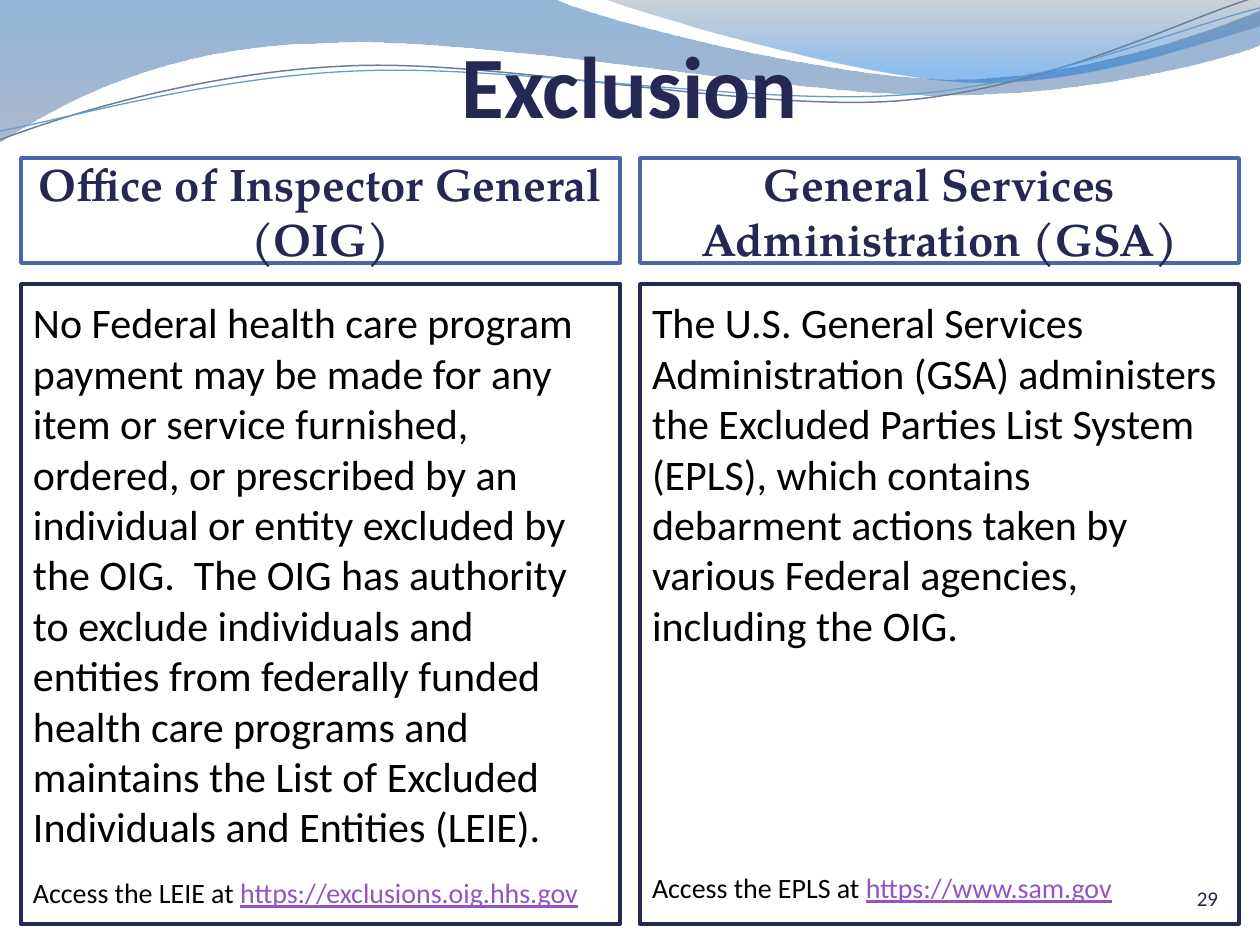
"""Builds the Exclusion slide comparing the OIG and GSA lists."""
import dataclasses
import math

import lxml.etree
import pptx
import pptx.dml.color
import pptx.enum.shapes
import pptx.enum.text
import pptx.oxml.ns
import pptx.util

PX = 914400 / 126
ALIGN = pptx.enum.text.PP_ALIGN
ANCHOR = pptx.enum.text.MSO_ANCHOR
qn = pptx.oxml.ns.qn


@dataclasses.dataclass(frozen=True)
class Theme:
    """Colours, fonts and type sizes of the slide."""
    navy: str = "242852"
    blue: str = "4A66AC"
    white: str = "FFFFFF"
    black: str = "000000"
    link: str = "9454C3"
    number: str = "22264E"
    body_font: str = "Calibri"
    head_font: str = "TeX Gyre Pagella"
    title_size: int = 50
    head_size: int = 26
    body_size: int = 24
    link_size: int = 16
    number_size: int = 12
    border: int = 2
    bands: tuple = (((0, "125EAA", 45), (100, "697FA4", 55)),
                    ((0, "596982", 30), (80, "0670DA", 45)))
    strands: tuple = (("707E95", 0.85), ("629DD1", 0.75))


T = Theme()
TILT = 2.7

BANDS = (
    [(0, 0), (554, -1),
     ((600, 21), (837, 79), (955, 79)), ((1075, 79), (1207, 33), (1260, 11)),
     (1261, 45),
     ((1239, 55), (1096, 96), (940, 95)), ((784, 95), (481, 35), (324, 43)),
     ((163, 45), (58, 105), (-1, 142))],
    [(604, -1),
     ((641, 14), (859, 78), (969, 82)), ((1079, 87), (1211, 40), (1260, 26)),
     (1260, 0)],
)
STRANDS = (
    [(0, 140), ((60, 117), (199, 72), (349, 66)),
     ((498, 59), (747, 112), (898, 101)), ((1050, 89), (1182, 19), (1257, -3))],
    [(0, 131), ((59, 121), (207, 77), (357, 71)),
     ((508, 64), (752, 106), (903, 95)), ((1053, 84), (1185, 26), (1260, 8))],
)
COLUMNS = (
    ("Office of Inspector General (OIG)",
     "No Federal health care program payment may be made for any item or "
     "service furnished, ordered, or prescribed by an individual or entity "
     "excluded by the OIG.  The OIG has authority to exclude individuals and "
     "entities from federally funded health care programs and maintains the "
     "List of Excluded Individuals and Entities (LEIE).",
     "Access the LEIE at ", "https://exclusions.oig.hhs.gov", 14),
    ("General Services Administration (GSA)",
     "The U.S. General Services Administration (GSA) administers the Excluded "
     "Parties List System (EPLS), which contains debarment actions taken by "
     "various Federal agencies, including the OIG.",
     "Access the EPLS at ", "https://www.sam.gov", 126),
)


def emu(px):
    """Turn px into EMU."""
    return pptx.util.Emu(round(px * PX))


def rgb(code):
    """Turn a hex code into a colour."""
    return pptx.dml.color.RGBColor.from_string(code)


def apply(obj, fmt):
    """Set each attribute named in a dict of format values."""
    for name, value in fmt.items():
        setattr(obj, name, value)


def turn(pt, centre, degrees):
    """Rotate a point clockwise about a centre."""
    dx, dy = pt[0] - centre[0], pt[1] - centre[1]
    c, s = math.cos(math.radians(degrees)), math.sin(math.radians(degrees))
    return centre[0] + dx * c - dy * s, centre[1] + dx * s + dy * c


def add_curve(slide, box, nodes, closed, tilt=0):
    """Draw an outline of points and cubic curve segments relative to a box."""
    x, y, w, h = box
    curved = [isinstance(node[0], tuple) for node in nodes]
    flat = [pt for node, bent in zip(nodes, curved) for pt in (node if bent else (node,))]
    turned = [turn(pt, (w / 2, h / 2), tilt) for pt in flat]
    pts = [(emu(x + px), emu(y + py)) for px, py in turned]
    fb = slide.shapes.build_freeform(*pts[0])
    fb.add_line_segments(pts[1:], close=closed)
    sp = fb.convert_to_shape()
    sp.shadow.inherit = False
    sp.rotation = -tilt
    lines = iter(list(sp.element.iter(qn("a:lnTo"))))
    for bent in curved[1:]:
        line = next(lines)
        if bent:
            curve = lxml.etree.Element(qn("a:cubicBezTo"))
            line.addprevious(curve)
            for part in (line, next(lines), next(lines)):
                curve.append(part[0])
                part.getparent().remove(part)
    return sp


def add_waves(slide, box):
    """Draw the translucent bands and thin strands of the header."""
    for nodes, stops in zip(BANDS, T.bands):
        sp = add_curve(slide, box, nodes, True)
        sp.line.fill.background()
        sp.fill.gradient()
        sp.fill.gradient_angle = 270
        for stop, (position, code, _) in zip(sp.fill.gradient_stops, stops):
            stop.position = position / 100
            stop.color.rgb = rgb(code)
        colours = sp.element.iter(qn("a:srgbClr"))
        for clr, (_, _, opacity) in zip(colours, stops):
            lxml.etree.SubElement(clr, qn("a:alpha"), val=str(opacity * 1000))
    for nodes, (code, width) in zip(STRANDS, T.strands):
        sp = add_curve(slide, box, nodes, False, TILT)
        sp.fill.background()
        sp.line.color.rgb = rgb(code)
        sp.line.width = pptx.util.Pt(width)


def set_frame(sp, anchor, margins):
    """Prepare the text frame of a shape with px margins."""
    tf = sp.text_frame
    sides = ("margin_left", "margin_top", "margin_right", "margin_bottom")
    apply(tf, {"word_wrap": True, "vertical_anchor": anchor,
               **dict(zip(sides, map(emu, margins)))})
    return tf


def add_run(p, text, size, color, name=T.body_font, **fmt):
    """Add one formatted run to a paragraph."""
    r = p.add_run()
    r.text = text
    apply(r.font, {"size": pptx.util.Pt(size), "name": name, **fmt})
    r.font.color.rgb = rgb(color)


def add_label(slide, box, text, align, *style, **fmt):
    """Place a bottom-anchored line of text in a box."""
    sp = slide.shapes.add_textbox(*map(emu, box))
    p = set_frame(sp, ANCHOR.BOTTOM, (0, 0, 0, 0)).paragraphs[0]
    p.alignment = align
    add_run(p, text, *style, **fmt)


def add_panel(slide, box, border):
    """Place a white bordered rectangle."""
    sp = slide.shapes.add_shape(pptx.enum.shapes.MSO_SHAPE.RECTANGLE, *map(emu, box))
    sp.shadow.inherit = False
    sp.fill.solid()
    sp.fill.fore_color.rgb = rgb(T.white)
    sp.line.color.rgb = rgb(border)
    sp.line.width = pptx.util.Pt(T.border)
    return sp


def add_column(slide, box, heading, body, lead, address, gap):
    """Place a heading panel above its body panel."""
    x, y, w, h = box
    head_h, body_top = 105, 126
    sp = add_panel(slide, (x, y, w, head_h), T.blue)
    p = set_frame(sp, ANCHOR.MIDDLE, (6, 0, 6, 0)).paragraphs[0]
    p.alignment = ALIGN.CENTER
    add_run(p, heading, T.head_size, T.navy, T.head_font, bold=True)

    sp = add_panel(slide, (x, y + body_top, w, h - body_top), T.navy)
    tf = set_frame(sp, ANCHOR.TOP, (12, 13, 12, 6))
    p = tf.paragraphs[0]
    p.alignment = ALIGN.LEFT
    add_run(p, body, T.body_size, T.black)
    p = tf.add_paragraph()
    apply(p, {"alignment": ALIGN.LEFT, "space_before": pptx.util.Pt(gap)})
    add_run(p, lead, T.link_size, T.black)
    add_run(p, address, T.link_size, T.link, underline=True)


def main():
    """Build and save the slide."""
    prs = pptx.Presentation()
    apply(prs, {"slide_width": emu(1260), "slide_height": emu(945)})
    slide = prs.slides.add_slide(prs.slide_layouts[6])
    add_waves(slide, (0, 0, 1260, 142))
    add_label(slide, (0, 1, 1260, 135), "Exclusion", ALIGN.CENTER,
              T.title_size, T.navy, bold=True)
    margin, gutter, top, height = 21, 20, 158, 766
    width = (1260 - 2 * margin - gutter) // 2
    for i, column in enumerate(COLUMNS):
        add_column(slide, (margin + i * (width + gutter), top, width, height), *column)
    add_label(slide, (1113, 861, 105, 50), "29", ALIGN.RIGHT, T.number_size, T.number)
    prs.save("out.pptx")


if __name__ == "__main__":
    main()
